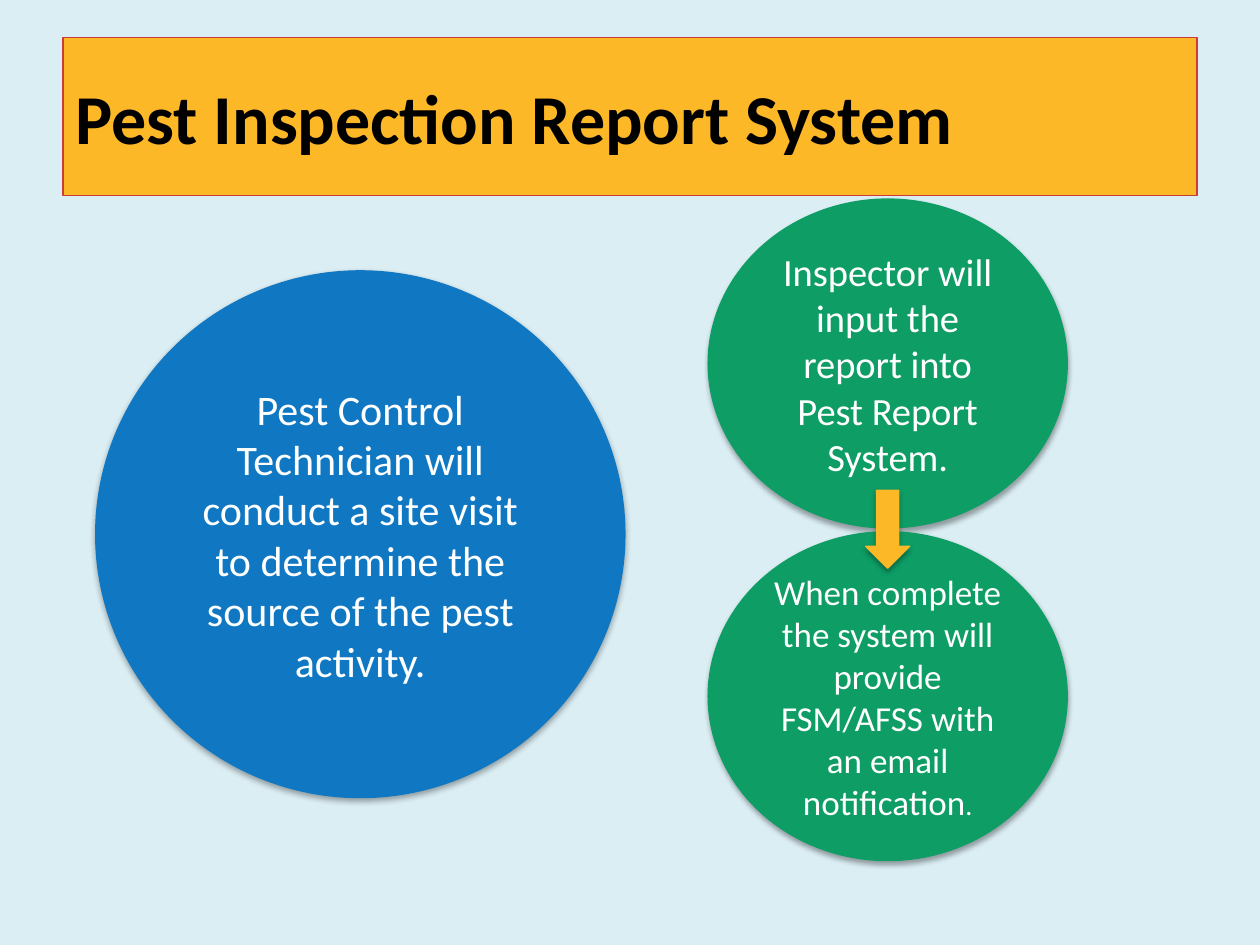
from lxml import etree
from pptx import Presentation
from pptx.dml.color import RGBColor
from pptx.enum import shapes, text
from pptx.oxml import ns
from pptx.util import Inches, Pt

FONT = "Calibri"
BACKGROUND = RGBColor(0xDB, 0xEE, 0xF4)
AMBER = RGBColor(0xFD, 0xB8, 0x27)
RED = RGBColor(0xCA, 0x3C, 0x3C)
BLUE = RGBColor(0x10, 0x78, 0xC3)
GREEN = RGBColor(0x0E, 0x9D, 0x65)
WHITE = RGBColor(0xFF, 0xFF, 0xFF)
BLACK = RGBColor(0, 0, 0)


def paint(shape, fill, outline):
    shape.fill.solid()
    shape.fill.fore_color.rgb = fill
    shape.line.color.rgb = outline
    shape.line.width = Pt(0.75)


def add_shadow(shape):
    shape.shadow.inherit = False
    effects = shape._element.spPr.find(ns.qn("a:effectLst"))
    shadow = etree.SubElement(
        effects, ns.qn("a:outerShdw"), blurRad=str(Pt(3.1)),
        dist=str(Pt(1.8)), dir="5400000", rotWithShape="0")
    color = etree.SubElement(shadow, ns.qn("a:srgbClr"), val="000000")
    etree.SubElement(color, ns.qn("a:alpha"), val="35000")


def add_title(slide, wording):
    title = slide.shapes.title
    title.left, title.top = Inches(0.5), Inches(0.3)
    title.width, title.height = Inches(9), Inches(1.25)
    paint(title, AMBER, RED)
    title.text_frame.text = wording
    title.text_frame.vertical_anchor = text.MSO_ANCHOR.MIDDLE
    heading = title.text_frame.paragraphs[0]
    heading.alignment = text.PP_ALIGN.LEFT
    heading.font.name = FONT
    heading.font.size = Pt(40)
    heading.font.bold = True
    heading.font.color.rgb = BLACK


def add_figure(slide, preset, box, color):
    figure = slide.shapes.add_shape(preset, *map(Inches, box))
    paint(figure, color, color)
    add_shadow(figure)
    return figure


def add_step(slide, box, color, wording, size):
    step = add_figure(slide, shapes.MSO_SHAPE.FLOWCHART_CONNECTOR, box, color)
    frame = step.text_frame
    frame.word_wrap = True
    frame.vertical_anchor = text.MSO_ANCHOR.MIDDLE
    sentence = frame.paragraphs[0]
    sentence.alignment = text.PP_ALIGN.CENTER
    sentence.font.name = FONT
    sentence.font.size = Pt(size)
    sentence.font.color.rgb = WHITE
    sentence.add_run().text = wording
    return sentence


def main():
    deck = Presentation()
    deck.slide_width, deck.slide_height = Inches(10), Inches(7.5)
    slide = deck.slides.add_slide(deck.slide_layouts[5])
    slide.background.fill.solid()
    slide.background.fill.fore_color.rgb = BACKGROUND

    add_title(slide, "Pest Inspection Report System")
    add_step(slide, (0.76, 2.15, 4.2, 4.18), BLUE,
             "Pest Control Technician will conduct a site visit to determine "
             "the source of the pest activity.", 24)
    add_step(slide, (5.62, 1.58, 2.85, 2.61), GREEN,
             "Inspector will input the report into Pest Report System.", 22)
    notification = add_step(
        slide, (5.62, 4.22, 2.85, 2.61), GREEN,
        "When complete the system will provide FSM/AFSS with an email "
        "notification", 20)
    full_stop = notification.add_run()
    full_stop.text = "."
    full_stop.font.size = Pt(16)
    add_figure(slide, shapes.MSO_SHAPE.DOWN_ARROW,
               (6.87, 3.89, 0.35, 0.62), AMBER)

    deck.save("out.pptx")


if __name__ == "__main__":
    main()
